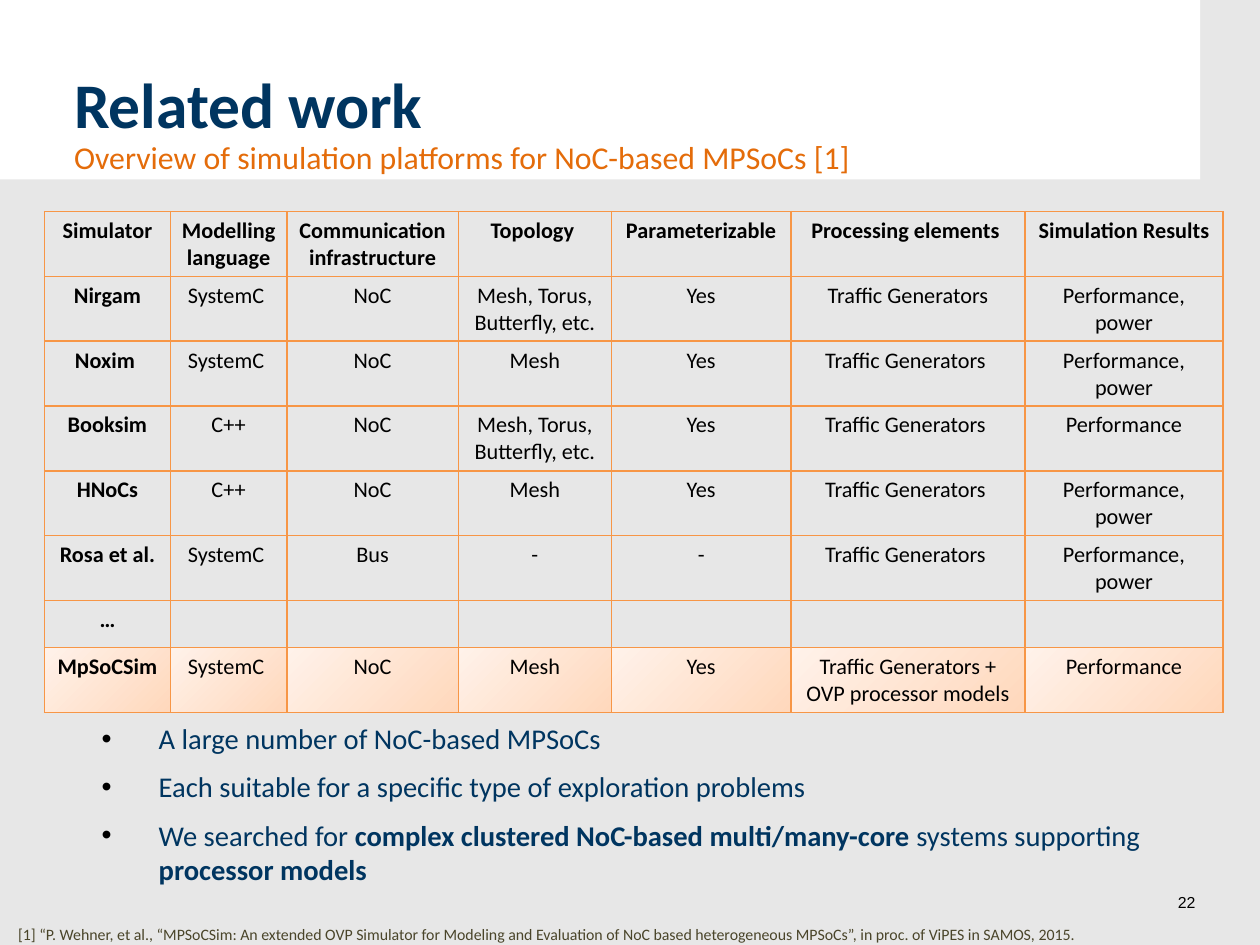
import pptx
import pptx.util
import pptx.oxml
import pptx.dml.color
import pptx.enum.shapes
import pptx.enum.text
from lxml import etree

Inches = pptx.util.Inches
Pt = pptx.util.Pt
Align = pptx.enum.text.PP_ALIGN
Anchor = pptx.enum.text.MSO_ANCHOR

title = "Related work"
subtitle = "Overview of simulation platforms for NoC-based MPSoCs [1]"
page_number = "22"
reference = (
    "[1] “P. Wehner, et al., “MPSoCSim: An extended OVP Simulator for Modeling and Evaluation "
    "of NoC based heterogeneous MPSoCs”, in proc. of ViPES in SAMOS, 2015."
)
headings = ["Simulator", "Modelling language", "Communication infrastructure", "Topology ",
            "Parameterizable", "Processing elements ", "Simulation Results "]
simulators = [
    ["Nirgam", "SystemC ", "NoC", "Mesh, Torus, Butterfly, etc.", "Yes",
     "Traffic Generators", "Performance, power"],
    ["Noxim ", "SystemC ", "NoC", "Mesh", "Yes", "Traffic Generators ", "Performance, power"],
    ["Booksim", "C++", "NoC", "Mesh, Torus, Butterfly, etc.", "Yes",
     "Traffic Generators ", "Performance"],
    ["HNoCs", "C++", "NoC", "Mesh", "Yes", "Traffic Generators ", "Performance, power"],
    ["Rosa et al.", "SystemC ", "Bus", "-", "-", "Traffic Generators ", "Performance, power"],
    ["…", "", "", "", "", "", ""],
    ["MpSoCSim", "SystemC ", "NoC", "Mesh", "Yes",
     "Traffic Generators + OVP processor models", "Performance"],
]
findings = [
    [("A large number of NoC-based MPSoCs", False)],
    [("Each suitable for a specific type of exploration problems", False)],
    [("We searched for ", False), ("complex clustered NoC-based multi/many-core", True),
     (" systems supporting ", False), ("processor models", True)],
]
slide_size_cm = (28, 21)
cm_per_inch = 2.54
column_widths = [1.1, 1.02, 1.5, 1.34, 1.57, 2.05, 1.73]
row_heights = [0.41, 0.54] + [0.41] * 6

theme = {
    "background": "E7E7E7",
    "banner": "FFFFFF",
    "border": "F79646",
    "bullet": "000000",
    "highlight": ("FFD8BC", "FFF2EA"),
    "title": {"name": "Calibri", "size": 40, "color": "003560", "bold": True},
    "subtitle": {"name": "Calibri", "size": 20, "color": "E46C0A"},
    "cell": {"name": "Calibri", "size": 14, "color": "000000"},
    "finding": {"name": "Calibri", "size": 18, "color": "003560"},
    "page": {"name": "Arial", "size": 10, "color": "000000"},
    "reference": {"name": "Calibri", "size": 10, "color": "4A452A"},
}


def rgb(value):
    return pptx.dml.color.RGBColor.from_string(value)


def style(font, look):
    for key, value in look.items():
        if key == "color":
            font.color.rgb = rgb(value)
        else:
            setattr(font, key, Pt(value) if key == "size" else value)


def add_run(paragraph, words, look):
    run = paragraph.add_run()
    run.text = words
    style(run.font, look)


def add_frame(slide, box, anchor=Anchor.TOP):
    frame = slide.shapes.add_textbox(*map(Inches, box)).text_frame
    frame.word_wrap = True
    frame.vertical_anchor = anchor
    return frame


def add_bullet(paragraph):
    properties = paragraph._p.get_or_add_pPr()
    properties.set("marL", str(Inches(0.5)))
    properties.set("indent", str(-Inches(0.5)))
    colour = etree.SubElement(properties, pptx.oxml.ns.qn("a:buClr"))
    etree.SubElement(colour, pptx.oxml.ns.qn("a:srgbClr"), val=theme["bullet"])
    etree.SubElement(properties, pptx.oxml.ns.qn("a:buFont"), typeface="Arial")
    etree.SubElement(properties, pptx.oxml.ns.qn("a:buChar"), char="•")


def add_borders(cell):
    properties = cell._tc.get_or_add_tcPr()
    for side in ("lnL", "lnR", "lnT", "lnB"):
        line = etree.SubElement(properties, pptx.oxml.ns.qn("a:" + side), w=str(Pt(1)))
        fill = etree.SubElement(line, pptx.oxml.ns.qn("a:solidFill"))
        etree.SubElement(fill, pptx.oxml.ns.qn("a:srgbClr"), val=theme["border"])


def fill_cell(cell, highlighted):
    if not highlighted:
        cell.fill.background()
        return
    cell.fill.gradient()
    cell.fill.gradient_angle = 135
    for stop, colour in zip(cell.fill.gradient_stops, theme["highlight"]):
        stop.color.rgb = rgb(colour)


def add_comparison(slide):
    rows = [headings] + simulators
    table = slide.shapes.add_table(
        len(rows), len(headings), Inches(0.39), Inches(1.85),
        Inches(sum(column_widths)), Inches(sum(row_heights))).table
    table.first_row = False
    table.horz_banding = False
    for column, width in zip(table.columns, column_widths):
        column.width = Inches(width)
    for r, (row, height) in enumerate(zip(rows, row_heights)):
        table.rows[r].height = Inches(height)
        for c, words in enumerate(row):
            cell = table.cell(r, c)
            add_borders(cell)
            fill_cell(cell, r == len(rows) - 1)
            if words:
                paragraph = cell.text_frame.paragraphs[0]
                paragraph.alignment = Align.CENTER
                add_run(paragraph, words, {**theme["cell"], "bold": r == 0 or c == 0})


def add_findings(slide):
    frame = add_frame(slide, (0.79, 6.26, 9.92, 1.65))
    for i, finding in enumerate(findings):
        paragraph = frame.add_paragraph() if i else frame.paragraphs[0]
        add_bullet(paragraph)
        if i:
            paragraph.space_before = Pt(8.8)
        for words, bold in finding:
            add_run(paragraph, words, {**theme["finding"], "bold": bold})


def main():
    deck = pptx.Presentation()
    deck.slide_width, deck.slide_height = (
        Inches(length / cm_per_inch) for length in slide_size_cm)
    slide = deck.slides.add_slide(deck.slide_layouts[6])
    slide.background.fill.solid()
    slide.background.fill.fore_color.rgb = rgb(theme["background"])

    banner = slide.shapes.add_shape(
        pptx.enum.shapes.MSO_SHAPE.RECTANGLE, 0, 0, Inches(10.5), Inches(1.57))
    banner.shadow.inherit = False
    banner.fill.solid()
    banner.fill.fore_color.rgb = rgb(theme["banner"])
    banner.line.fill.background()

    page = add_frame(slide, (10.06, 7.81, 0.4, 0.17))
    for margin in ("margin_left", "margin_top", "margin_right", "margin_bottom"):
        setattr(page, margin, 0)
    page.paragraphs[0].alignment = Align.RIGHT
    add_run(page.paragraphs[0], page_number, theme["page"])

    for words, top, look in ((title, 0.43, "title"), (subtitle, 0.9, "subtitle")):
        frame = add_frame(slide, (0.55, top, 9.41, 0.94), Anchor.MIDDLE)
        add_run(frame.paragraphs[0], words, theme[look])

    add_comparison(slide)
    add_findings(slide)
    source = add_frame(slide, (0.06, 8.04, 10.39, 0.23))
    add_run(source.paragraphs[0], reference, theme["reference"])
    deck.save("out.pptx")


if __name__ == "__main__":
    main()
